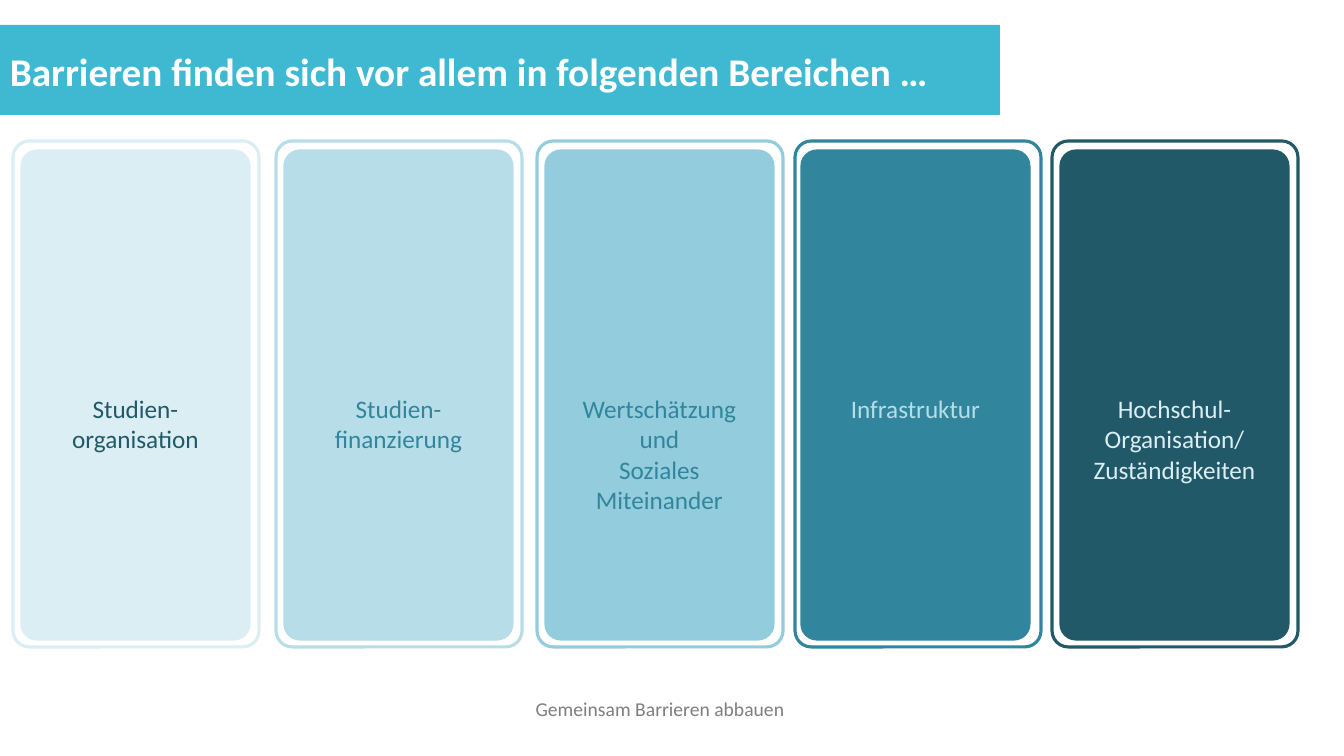
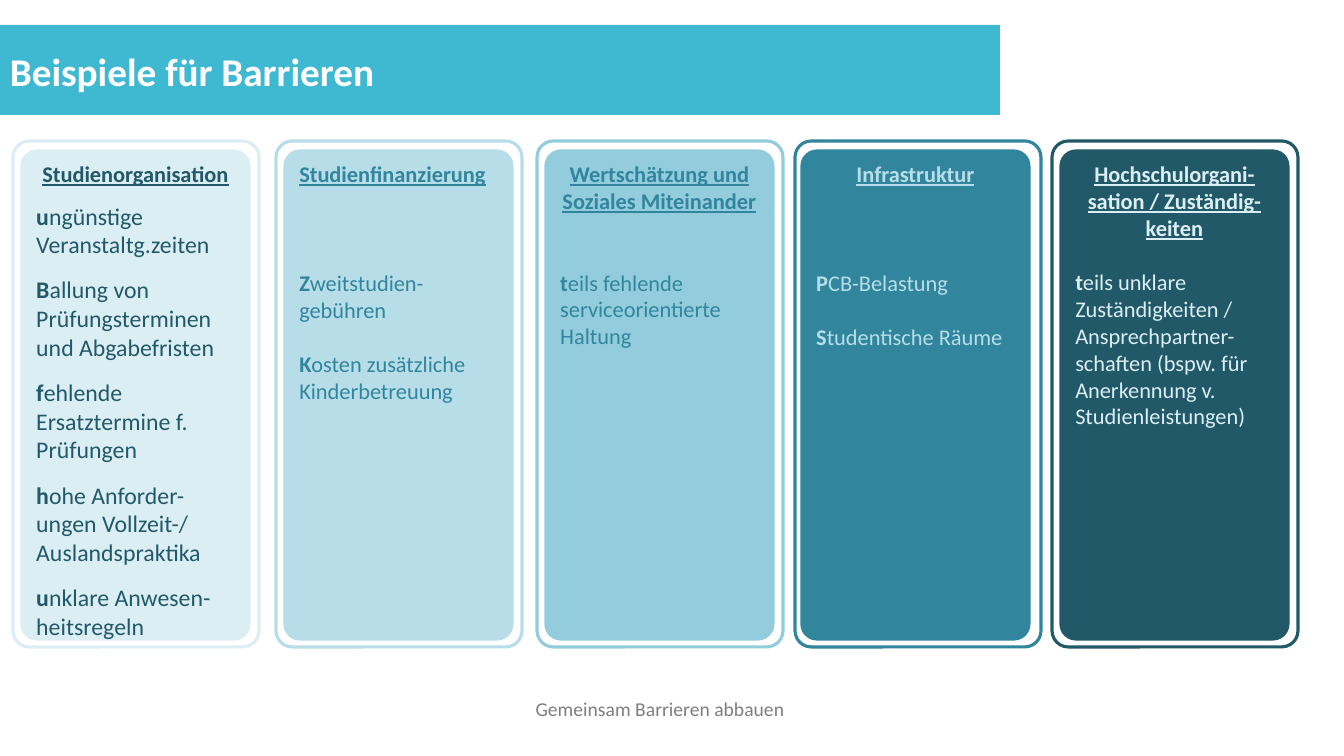
from dataclasses import dataclass

from pptx import Presentation
from pptx.dml.color import RGBColor
from pptx.enum.shapes import MSO_SHAPE as Shape
from pptx.enum.text import MSO_ANCHOR as Anchor, PP_ALIGN as Align
from pptx.util import Emu, Pt

# Shared look
FONT = "Calibri"
WHITE = RGBColor(0xFF, 0xFF, 0xFF)
BAND = RGBColor(0x3F, 0xB9, 0xD2)
GREY = RGBColor(0x7E, 0x7E, 0x7E)
PALE = RGBColor(0xDB, 0xEE, 0xF4)
LIGHT = RGBColor(0xB7, 0xDE, 0xE8)
MEDIUM = RGBColor(0x93, 0xCD, 0xDD)
TEAL = RGBColor(0x31, 0x85, 0x9C)
DARK = RGBColor(0x21, 0x59, 0x68)

FOOTER = "Gemeinsam Barrieren abbauen"
FRAME_TOP, FRAME_WIDTH, FRAME_HEIGHT = 141, 246, 506
CARD_TOP, CARD_WIDTH, CARD_HEIGHT = 151, 227, 488
INSET, LABEL_INSET = 5, 238
CORNER = 0.066
LINE = 19.5  # height in points of one line of 16 pt text


@dataclass
class Column:
    frame_left: int
    card_left: int
    fill: RGBColor
    ink: RGBColor


@dataclass
class Examples:
    heading: str
    items: list
    first_gap: float
    gap: float = LINE
    size: int = 16
    heading_align: Align = Align.CENTER


COLUMNS = [
    Column(13, 22, PALE, DARK),
    Column(276, 285, LIGHT, TEAL),
    Column(537, 546, MEDIUM, TEAL),
    Column(795, 802, TEAL, LIGHT),
    Column(1052, 1061, DARK, PALE),
]

AREAS = [
    "Studien-organisation",
    "Studien-finanzierung",
    "Wertschätzung und\nSoziales Miteinander",
    "Infrastruktur",
    "Hochschul-\nOrganisation/ Zuständigkeiten",
]

EXAMPLES = [
    Examples("Studienorganisation", [
        "ungünstige Veranstaltg.zeiten",
        "Ballung von Prüfungsterminen und Abgabefristen",
        "fehlende Ersatztermine f. Prüfungen",
        "hohe Anforder-ungen Vollzeit-/ Auslandspraktika",
        "unklare Anwesen-heitsregeln",
    ], first_gap=10, gap=12, size=17),
    Examples("Studienfinanzierung", [
        "Zweitstudien-gebühren",
        "Kosten zusätzliche Kinderbetreuung",
    ], first_gap=3 * LINE, heading_align=Align.LEFT),
    Examples("Wertschätzung und\nSoziales Miteinander", [
        "teils fehlende serviceorientierte Haltung",
    ], first_gap=2 * LINE),
    Examples("Infrastruktur", [
        "PCB-Belastung",
        "Studentische Räume",
    ], first_gap=3 * LINE),
    Examples("Hochschulorgani- sation / Zuständig-keiten", [
        "teils unklare Zuständigkeiten / Ansprechpartner-schaften "
        "(bspw. für Anerkennung v. Studienleistungen)",
    ], first_gap=LINE),
]


def px(value):
    return Emu(round(value * 914400 / 100.8))


def style(span, size, color, bold=False, underline=False):
    font = span.font
    font.name, font.size, font.bold, font.underline = FONT, Pt(size), bold, underline
    font.color.rgb = color


def add_box(slide, kind, left, top, width, height, fill, line=None):
    box = slide.shapes.add_shape(kind, px(left), px(top), px(width), px(height))
    box.shadow.inherit = False
    box.fill.solid()
    box.fill.fore_color.rgb = fill
    if line is None:
        box.line.fill.background()
    else:
        box.line.color.rgb = line
        box.line.width = Pt(2.25)
    if kind == Shape.ROUNDED_RECTANGLE:
        box.adjustments[0] = CORNER
    return box


def add_text(slide, text, left, top, width, height, size, color, bold=False):
    box = slide.shapes.add_textbox(px(left), px(top), px(width), px(height))
    frame = box.text_frame
    frame.word_wrap = True
    frame.text = text
    para = frame.paragraphs[0]
    style(para.runs[0], size, color, bold)
    return frame, para


def add_page(deck, title):
    """Blank page with title band, title and footer."""
    page = deck.slides.add_slide(deck.slide_layouts[6])
    add_box(page, Shape.RECTANGLE, 0, 25, 1000, 90, BAND)
    add_text(page, title, 0, 42, 1013, 57, 28, WHITE, bold=True)
    frame, para = add_text(page, FOOTER, 431, 708, 458, 15, 14, GREY)
    frame.margin_left = frame.margin_right = frame.margin_top = frame.margin_bottom = 0
    para.alignment = Align.CENTER
    para.line_spacing = Pt(9.1)
    return page


def add_card(page, column, text, inset=INSET):
    """Outlined frame with a filled card in it; returns the card's text frame."""
    add_box(page, Shape.ROUNDED_RECTANGLE, column.frame_left, FRAME_TOP,
            FRAME_WIDTH, FRAME_HEIGHT, WHITE, column.fill)
    card = add_box(page, Shape.ROUNDED_RECTANGLE, column.card_left, CARD_TOP,
                   CARD_WIDTH, CARD_HEIGHT, column.fill, column.fill)
    frame = card.text_frame
    frame.word_wrap = True
    frame.vertical_anchor = Anchor.TOP
    frame.margin_top = px(inset)
    frame.text = text
    return frame


def add_area(page, column, label):
    for para in add_card(page, column, label, LABEL_INSET).paragraphs:
        para.alignment = Align.CENTER
        style(para.runs[0], 18, column.ink)


def add_examples(page, column, examples):
    frame = add_card(page, column, examples.heading)
    for para in frame.paragraphs:
        para.alignment = examples.heading_align
        style(para.runs[0], 16, column.ink, bold=True, underline=True)
    for index, item in enumerate(examples.items):
        para = frame.add_paragraph()
        para.alignment = Align.LEFT
        para.space_before = Pt(examples.gap if index else examples.first_gap)
        # The first letter of each item is bold
        for text, bold in ((item[0], True), (item[1:], False)):
            span = para.add_run()
            span.text = text
            style(span, examples.size, column.ink, bold)


def main():
    deck = Presentation()
    deck.slide_width, deck.slide_height = px(1344), px(756)

    # Areas
    page = add_page(deck, "Barrieren finden sich vor allem in folgenden Bereichen …")
    for column, label in zip(COLUMNS, AREAS):
        add_area(page, column, label)

    # Examples for each area
    page = add_page(deck, "Beispiele für Barrieren")
    for column, examples in zip(COLUMNS, EXAMPLES):
        add_examples(page, column, examples)

    deck.save("out.pptx")


if __name__ == "__main__":
    main()
